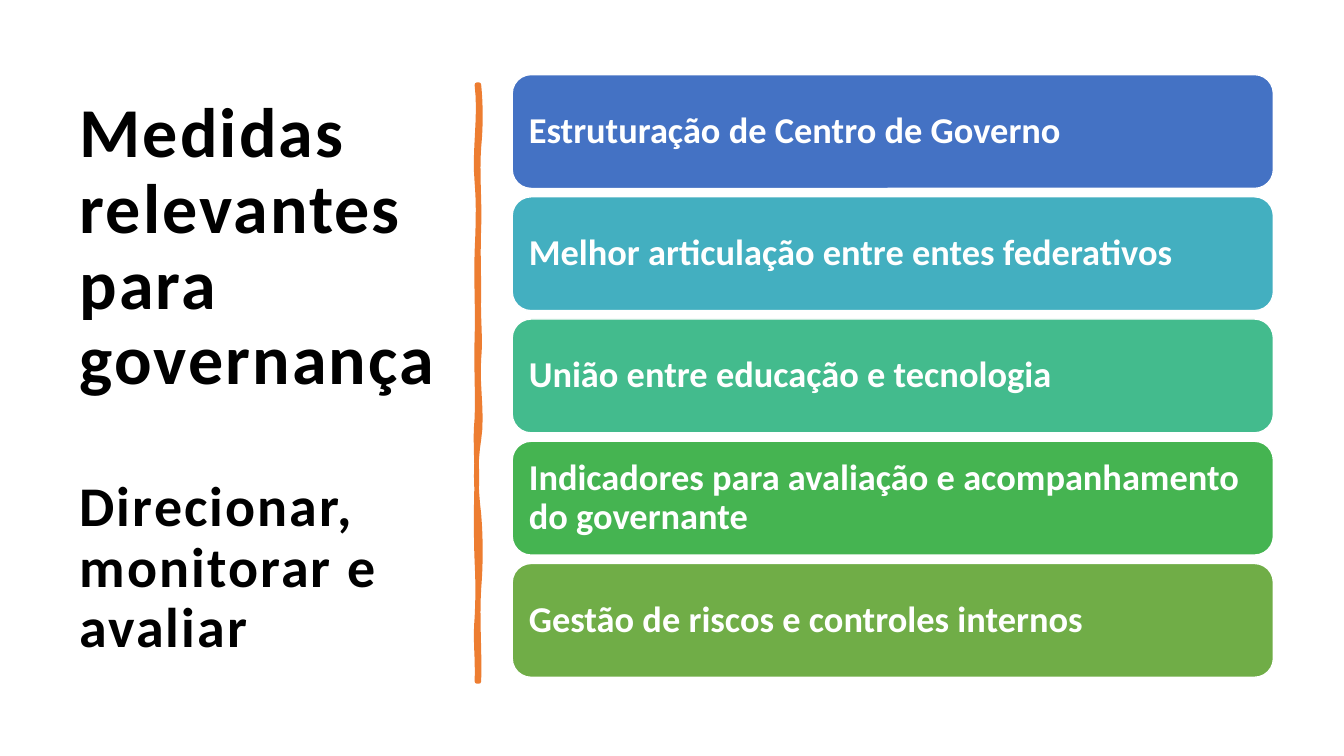
from pptx import Presentation
from pptx.dml.color import RGBColor
from pptx.enum.shapes import MSO_SHAPE
from pptx.enum.text import MSO_ANCHOR, MSO_AUTO_SIZE, PP_ALIGN
from pptx.util import Pt

PX = 9144
CARD = MSO_SHAPE.ROUNDED_RECTANGLE
MIDDLE = MSO_ANCHOR.MIDDLE
LEFT = PP_ALIGN.LEFT
FIXED = MSO_AUTO_SIZE.NONE
BLACK = RGBColor(0x00, 0x00, 0x00)
WHITE = RGBColor(0xFF, 0xFF, 0xFF)
ORANGE = RGBColor(0xED, 0x7D, 0x31)
BLUE = RGBColor(0x44, 0x72, 0xC4)
TEAL = RGBColor(0x43, 0xAF, 0xC0)
MINT = RGBColor(0x43, 0xBB, 0x8D)
GREEN = RGBColor(0x45, 0xB4, 0x51)
OLIVE = RGBColor(0x70, 0xAD, 0x47)

HEADS = [
    ("Medidas relevantes para governança", 50, 56),
    ("Direcionar, monitorar e avaliar", 40, 6),
]
CARDS = [
    ("Estruturação de Centro de Governo", BLUE),
    ("Melhor articulação entre entes federativos", TEAL),
    ("União entre educação e tecnologia", MINT),
    ("Indicadores para avaliação e acompanhamento do governante", GREEN),
    ("Gestão de riscos e controles internos", OLIVE),
]
DOWN = [(62, 2, 2), (142, -2, 1), (210, -1, 0), (272, -1, 2),
        (352, -2, 4), (426, -4, -3), (500, 2, 2), (592, -2, 1)]
UP = [(529, 1, -2), (473, 1, 1), (393, -1, -1), (331, 0, -2),
      (251, 1, -1), (166, 1, -1), (97, 1, 2), (0, -3, 4)]
STEPS = 8


def px(num):
    """Turn px into EMU."""
    return round(num * PX)


def put(obj, form):
    """Set each attribute named in a dict of format values."""
    for name, val in form.items():
        setattr(obj, name, val)


def write(para, text, size, color, after):
    """Fill one paragraph with a bold run and return the run."""
    run = para.add_run()
    run.text = text
    put(para, {"alignment": LEFT, "line_spacing": 0.9,
               "space_before": Pt(0), "space_after": Pt(after)})
    put(run.font, {"name": "Calibri", "size": Pt(size), "bold": True})
    run.font.color.rgb = color
    return run


def add_title(slide, left, top, width, height):
    """Place the spaced-out title in its box."""
    title = slide.shapes.title
    put(title, {"left": px(left), "top": px(top),
                "width": px(width), "height": px(height)})
    frame = title.text_frame
    put(frame, {"word_wrap": True, "auto_size": FIXED,
                "vertical_anchor": MIDDLE})
    for num, (text, size, after) in enumerate(HEADS):
        para = frame.add_paragraph() if num else frame.paragraphs[0]
        run = write(para, text, size, BLACK, after)
        run.font._element.set("spc", "150")


def wave(left, top, start, knots):
    """List the points of one wavy edge, bent between its knots."""
    spots = []
    for end, near, far in knots:
        for step in range(1, STEPS + 1):
            t = step / STEPS
            bend = 3 * t * (1 - t) * ((1 - t) * near + t * far)
            spots.append((px(left + bend), px(top + start + t * (end - start))))
        start = end
    return spots


def add_brush(slide, left, top, width, height):
    """Draw the upright brush stroke in its box."""
    right = left + width
    spots = wave(right, top, 0, DOWN)
    spots.append((px(left), px(top + height)))
    spots += wave(left, top, height, UP)
    pen = slide.shapes.build_freeform(px(right), px(top), 1)
    pen.add_line_segments(spots, close=True)
    brush = pen.convert_to_shape()
    brush.shadow.inherit = False
    brush.fill.solid()
    brush.fill.fore_color.rgb = ORANGE
    brush.line.color.rgb = ORANGE
    brush.line.width = Pt(3.25)


def add_cards(slide, left, top, width, height, tall):
    """Stack the cards evenly in the box, each as high as tall."""
    pitch = (height - tall) / (len(CARDS) - 1)
    for num, (text, color) in enumerate(CARDS):
        card = slide.shapes.add_shape(
            CARD, px(left), px(top + num * pitch), px(width), px(tall))
        card.shadow.inherit = False
        card.fill.solid()
        card.fill.fore_color.rgb = color
        card.line.color.rgb = WHITE
        card.line.width = Pt(1)
        frame = card.text_frame
        put(frame, {"word_wrap": True, "vertical_anchor": MIDDLE,
                    "margin_left": px(11), "margin_right": px(11)})
        write(frame.paragraphs[0], text, 26, WHITE, 0)


def main():
    """Build the slide and save it."""
    deck = Presentation()
    put(deck, {"slide_width": px(1333), "slide_height": px(750)})
    slide = deck.slides.add_slide(deck.slide_layouts[5])
    add_title(slide, 69, 70, 374, 611)
    add_brush(slide, 473, 84, 2, 592)
    add_cards(slide, 508, 74, 755, 598, 113)
    deck.save("out.pptx")


if __name__ == "__main__":
    main()
